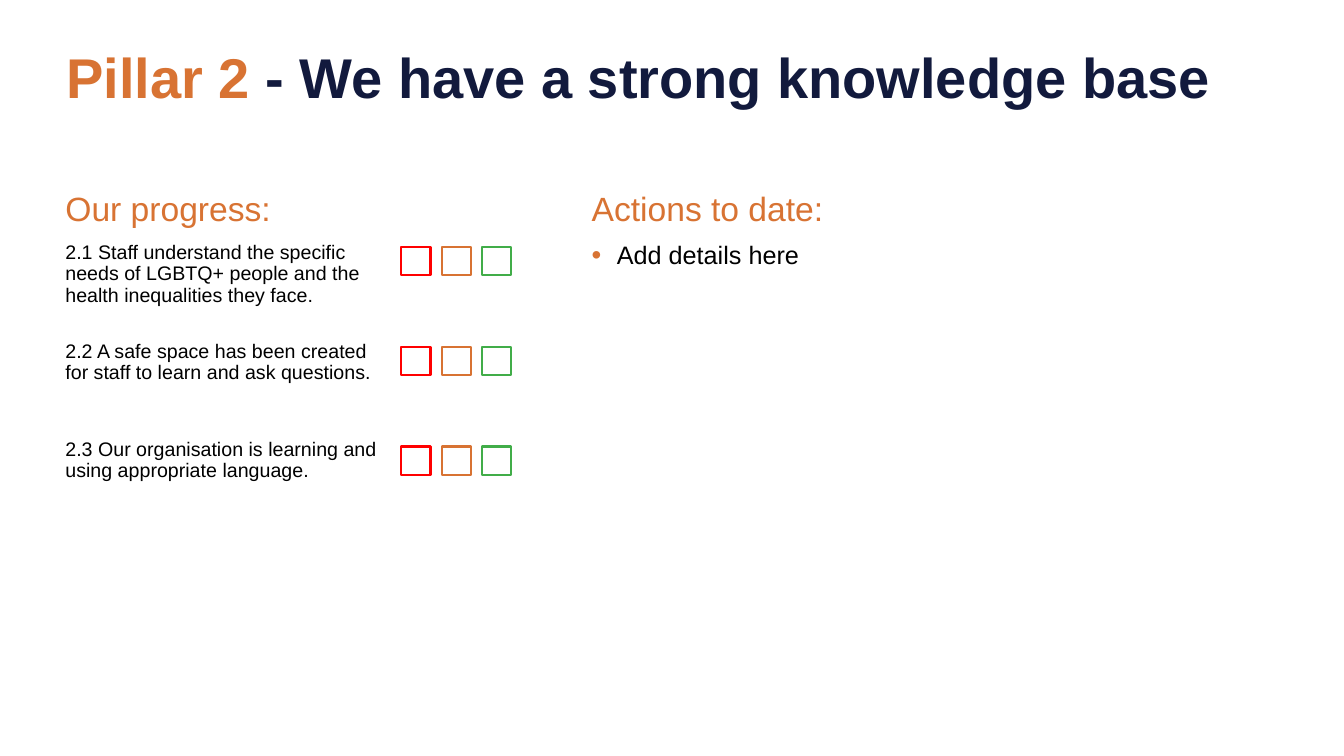
from lxml.etree import SubElement
from pptx import Presentation
from pptx.dml.color import RGBColor
from pptx.enum.shapes import MSO_SHAPE as Shape
from pptx.enum.text import MSO_ANCHOR as Anchor, MSO_AUTO_SIZE as AutoSize, PP_ALIGN as Align
from pptx.oxml.ns import qn
from pptx.util import Inches, Pt

ORANGE, NAVY, BLACK = "D87333", "121A3D", "000000"
RATINGS = ["FF0000", ORANGE, "41AD49"]


def colour(value):
    return RGBColor.from_string(value)


class PillarSlide:
    font = "Arial"

    def __init__(self, deck):
        self.slide = deck.slides.add_slide(deck.slide_layouts[5])

    def style(self, run, size, hue, bold=False):
        run.font.name = self.font
        run.font.size = Pt(size)
        run.font.bold = bold
        run.font.color.rgb = colour(hue)

    def title(self, box, parts):
        heading = self.slide.shapes.title
        heading.left, heading.top, heading.width, heading.height = map(Inches, box)
        frame = heading.text_frame
        frame.word_wrap = True
        frame.auto_size = AutoSize.NONE
        frame.vertical_anchor = Anchor.MIDDLE
        line = frame.paragraphs[0]
        line.alignment = Align.LEFT
        line.line_spacing = 0.9
        for words, hue in parts:
            run = line.add_run()
            run.text = words
            self.style(run, 40, hue, bold=True)

    def column(self, box, heading):
        frame = self.slide.shapes.add_textbox(*map(Inches, box)).text_frame
        frame.word_wrap = True
        self.paragraph(frame.paragraphs[0], heading, 24, ORANGE)
        return frame

    def paragraph(self, line, words, size, hue, before=10):
        line.text = words
        line.line_spacing = 0.9
        line.space_before = Pt(before)
        for run in line.runs:
            self.style(run, size, hue)

    def bullet(self, line, words):
        self.paragraph(line, words, 18, BLACK)
        props = line._p.get_or_add_pPr()
        props.set("marL", str(Inches(0.25)))
        props.set("indent", str(-Inches(0.25)))
        SubElement(SubElement(props, qn("a:buClr")), qn("a:srgbClr")).set("val", ORANGE)
        SubElement(props, qn("a:buSzPct")).set("val", "110000")
        SubElement(props, qn("a:buFont")).set("typeface", self.font)
        SubElement(props, qn("a:buChar")).set("char", "•")

    def checkbox(self, left, top, hue):
        square = self.slide.shapes.add_shape(
            Shape.RECTANGLE, Inches(left), Inches(top), Inches(0.29), Inches(0.28))
        square.shadow.inherit = False
        square.fill.background()
        square.line.color.rgb = colour(hue)
        square.line.width = Pt(1.5)


def main():
    deck = Presentation()
    deck.slide_width, deck.slide_height = Inches(13.33), Inches(7.5)
    pillar = PillarSlide(deck)
    pillar.title((0.56, 0.07, 11.81, 1.45),
                 [("Pillar 2 ", ORANGE), ("- We have a strong knowledge base", NAVY)])

    actions = pillar.column((5.77, 1.86, 6.6, 4.95), "Actions to date:")
    pillar.bullet(actions.add_paragraph(), "Add details here")

    progress = pillar.column((0.55, 1.86, 4.68, 4.95), "Our progress:")
    goals = [
        ("2.1 Staff understand the specific\vneeds of LGBTQ+ people and the\v"
         "health inequalities they face.", 10),
        ("2.2 A safe space has been created\vfor staff to learn and ask questions.", 25),
        ("2.3 Our organisation is learning and\vusing appropriate language.", 40),
    ]
    for row, (goal, before) in enumerate(goals):
        pillar.paragraph(progress.add_paragraph(), goal, 14, BLACK, before)
        for place, rating in enumerate(RATINGS):
            pillar.checkbox(3.98 + 0.4 * place, 2.45 + 0.99 * row, rating)

    deck.save("out.pptx")


if __name__ == "__main__":
    main()
